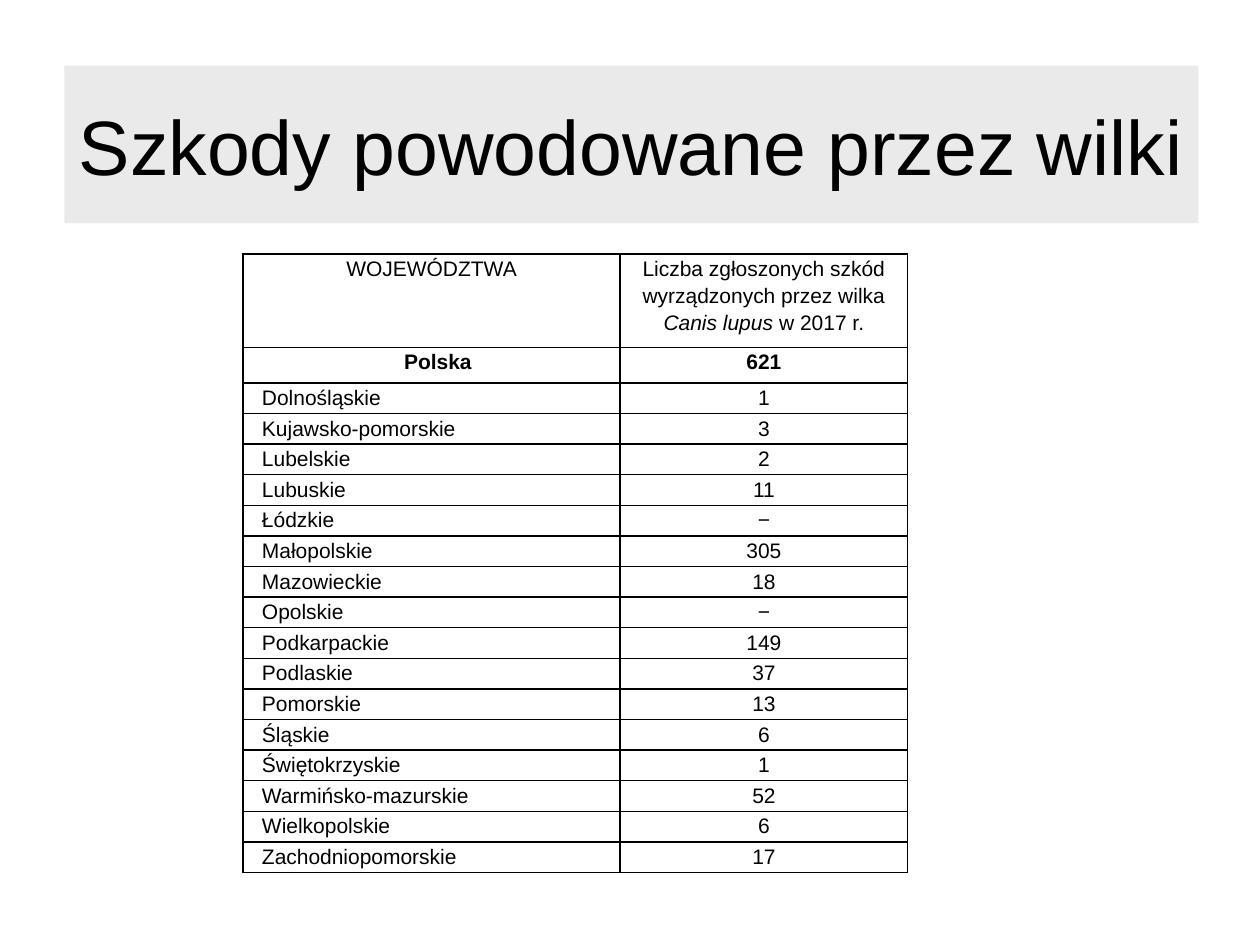
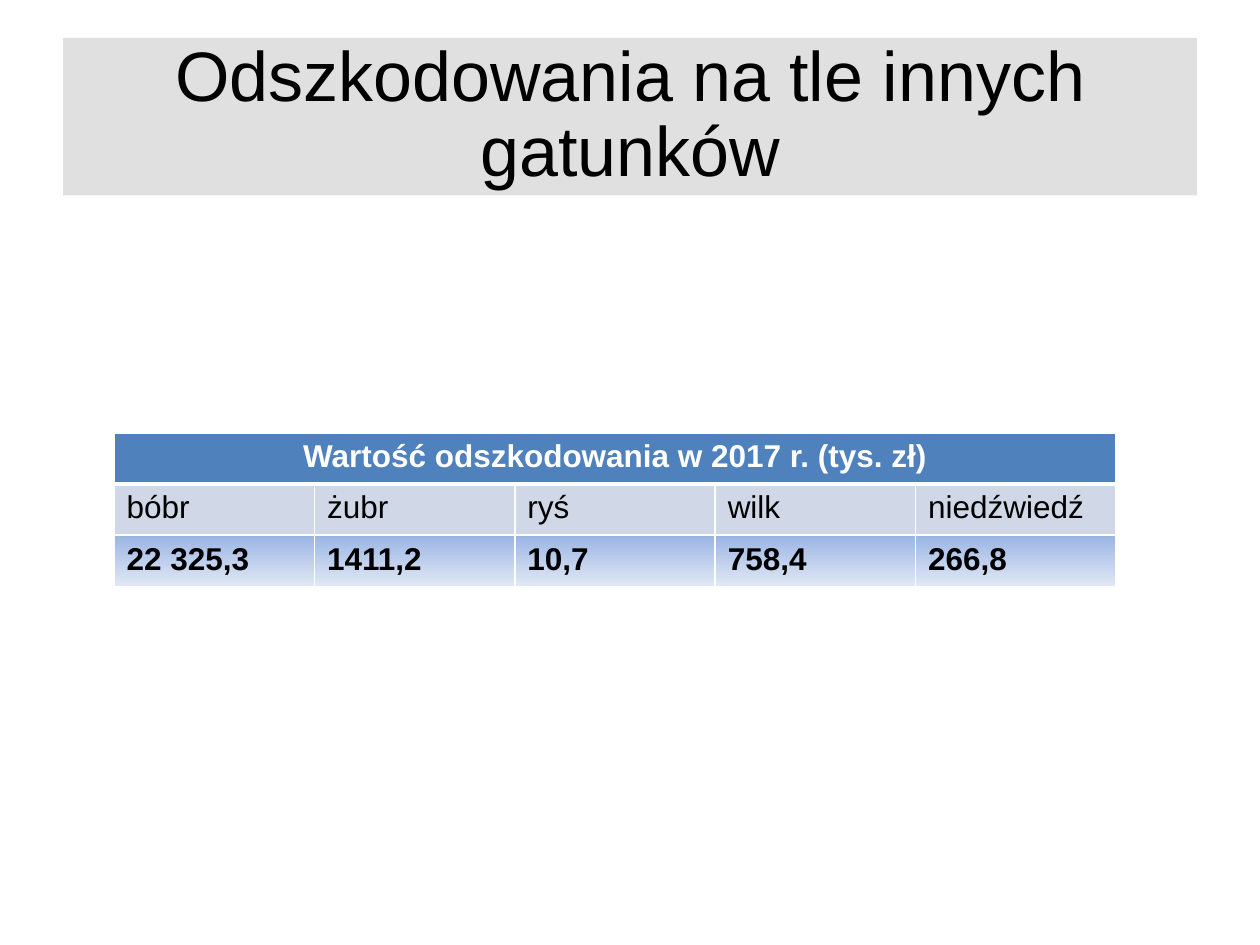
from lxml.etree import SubElement
from pptx import Presentation
from pptx.dml.color import RGBColor
from pptx.enum.text import MSO_ANCHOR, MSO_AUTO_SIZE, PP_ALIGN
from pptx.oxml import parse_xml
from pptx.oxml.ns import nsdecls, qn
from pptx.util import Pt

COLOURS = {
    "text": "000000", "white": "FFFFFF", "band": "E0E0E0",
    "header": "4F81BD", "species": "D0D8E8",
    "value_top": "9AB5E4", "value_bottom": "E1E8F5",
}
FONT = "Arial"
EDGES = ("L", "R", "T", "B")

DAMAGE_HEADER = [
    [("WOJEWÓDZTWA", False)],
    [("Liczba zgłoszonych szkód wyrządzonych przez wilka ", False),
     ("Canis lupus ", True), ("w 2017 r.", False)],
]
DAMAGE = [
    ("Polska", "621"),
    ("Dolnośląskie", "1"), ("Kujawsko-pomorskie", "3"),
    ("Lubelskie", "2"), ("Lubuskie", "11"),
    ("Łódzkie", "−"), ("Małopolskie", "305"),
    ("Mazowieckie", "18"), ("Opolskie", "−"),
    ("Podkarpackie", "149"), ("Podlaskie", "37"),
    ("Pomorskie", "13"), ("Śląskie", "6"),
    ("Świętokrzyskie", "1"), ("Warmińsko-mazurskie", "52"),
    ("Wielkopolskie", "6"), ("Zachodniopomorskie", "17"),
]
COMPENSATION = [("bóbr", "22 325,3"), ("żubr", "1411,2"), ("ryś", "10,7"),
                ("wilk", "758,4"), ("niedźwiedź", "266,8")]


def colour(name):
    return RGBColor.from_string(COLOURS[name])


def apply(target, values):
    for name, value in values.items():
        setattr(target, name, value)


def write(paragraph, runs, size, colour_name="text", bold=False, **layout):
    """Fill a paragraph with (text, italic) runs in the shared font."""
    apply(paragraph, layout)
    for text, italic in runs:
        run = paragraph.add_run()
        run.text = text
        apply(run.font, {"name": FONT, "size": Pt(size), "bold": bold,
                         "italic": italic})
        run.font.color.rgb = colour(colour_name)


def set_borders(cell, colour_name, widths):
    properties = cell._tc.get_or_add_tcPr()
    for index, edge in enumerate(EDGES):
        properties.insert(index, parse_xml(
            f'<a:ln{edge} {nsdecls("a")} w="{Pt(widths[edge])}"><a:solidFill>'
            f'<a:srgbClr val="{COLOURS[colour_name]}"/></a:solidFill></a:ln{edge}>'))


def add_title(slide, text, box, size=44, line_spacing=1.0, opacity=100):
    title = slide.shapes.title
    apply(title, dict(zip(("left", "top", "width", "height"), map(Pt, box))))
    title.fill.solid()
    title.fill.fore_color.rgb = colour("band")
    if opacity < 100:
        band_colour = title._element.spPr.find(".//" + qn("a:srgbClr"))
        SubElement(band_colour, qn("a:alpha"), val=str(opacity * 1000))
    apply(title.text_frame, {"word_wrap": True, "auto_size": MSO_AUTO_SIZE.NONE,
                             "vertical_anchor": MSO_ANCHOR.MIDDLE})
    write(title.text_frame.paragraphs[0], [(text, False)], size,
          alignment=PP_ALIGN.CENTER, line_spacing=line_spacing)


def add_plain_table(slide, left, top, widths, heights):
    """Add a table without banding, with the given column and row sizes."""
    table = slide.shapes.add_table(
        len(heights), len(widths), Pt(left), Pt(top),
        Pt(sum(widths)), Pt(sum(heights))).table
    apply(table, {"first_row": False, "horz_banding": False})
    for column, width in zip(table.columns, widths):
        column.width = Pt(width)
    for row, height in zip(table.rows, heights):
        row.height = Pt(height)
    return table


def add_damage_table(slide, left, top):
    heights = [53.4, 20.3] + [17.5] * (len(DAMAGE) - 1)
    table = add_plain_table(slide, left, top, [215.5, 164.3], heights)
    rows = [DAMAGE_HEADER] + [[[(text, False)] for text in row] for row in DAMAGE]
    for row_index, row in enumerate(rows):
        for column_index, runs in enumerate(row):
            cell = table.cell(row_index, column_index)
            apply(cell, {"margin_left": Pt(3.6), "margin_right": Pt(3.6),
                         "margin_top": 0, "margin_bottom": 0})
            cell.fill.background()
            set_borders(cell, "text", dict.fromkeys(EDGES, 1))
            paragraph = cell.text_frame.paragraphs[0]
            is_region = row_index > 1 and column_index == 0
            write(paragraph, runs, 12, bold=row_index == 1, line_spacing=1.15,
                  alignment=PP_ALIGN.LEFT if is_region else PP_ALIGN.CENTER)
            if row_index > 0 and column_index == 0:
                paragraph._p.get_or_add_pPr().set("indent", str(Pt(7.2)))


def fill_compensation_cell(cell, row_index):
    if row_index < 2:
        cell.fill.solid()
        cell.fill.fore_color.rgb = colour(("header", "species")[row_index])
        return
    cell.fill.gradient()
    cell.fill.gradient_angle = 270
    for stop, name in zip(cell.fill.gradient_stops, ("value_top", "value_bottom")):
        stop.color.rgb = colour(name)


def add_compensation_table(slide, left, top):
    count = len(COMPENSATION)
    table = add_plain_table(slide, left, top, [114.5] * count, [29.2] * 3)
    for row_index in range(3):
        for column_index in range(count):
            cell = table.cell(row_index, column_index)
            fill_compensation_cell(cell, row_index)
            set_borders(cell, "white", {
                "L": 1, "R": 1, "T": 3 if row_index == 1 else 1,
                "B": 3 if row_index == 0 else 1})
            if row_index > 0:
                text = COMPENSATION[column_index][row_index - 1]
                write(cell.text_frame.paragraphs[0], [(text, False)], 18,
                      bold=row_index == 2)
    # Heading across all columns
    heading = table.cell(0, 0)
    heading.merge(table.cell(0, count - 1))
    write(heading.text_frame.paragraphs[0],
          [("Wartość odszkodowania w 2017 r. (tys. zł)", False)], 18, "white",
          bold=True, alignment=PP_ALIGN.CENTER)


def main():
    presentation = Presentation()
    apply(presentation, {"slide_width": Pt(720), "slide_height": Pt(540)})
    title_only = presentation.slide_layouts[5]

    # Wolf damage by region
    slide = presentation.slides.add_slide(title_only)
    add_title(slide, "Szkody powodowane przez wilki", (36.8, 37.5, 648, 90),
              opacity=66)
    add_damage_table(slide, 138.9, 145.1)

    # Compensation by species: the two title lines are set to fit the band
    slide = presentation.slides.add_slide(title_only)
    add_title(slide, "Odszkodowania na tle innych gatunków", (36, 21.6, 648, 90),
              size=40, line_spacing=0.9)
    add_compensation_table(slide, 65.2, 247.4)

    presentation.save("out.pptx")


if __name__ == "__main__":
    main()
